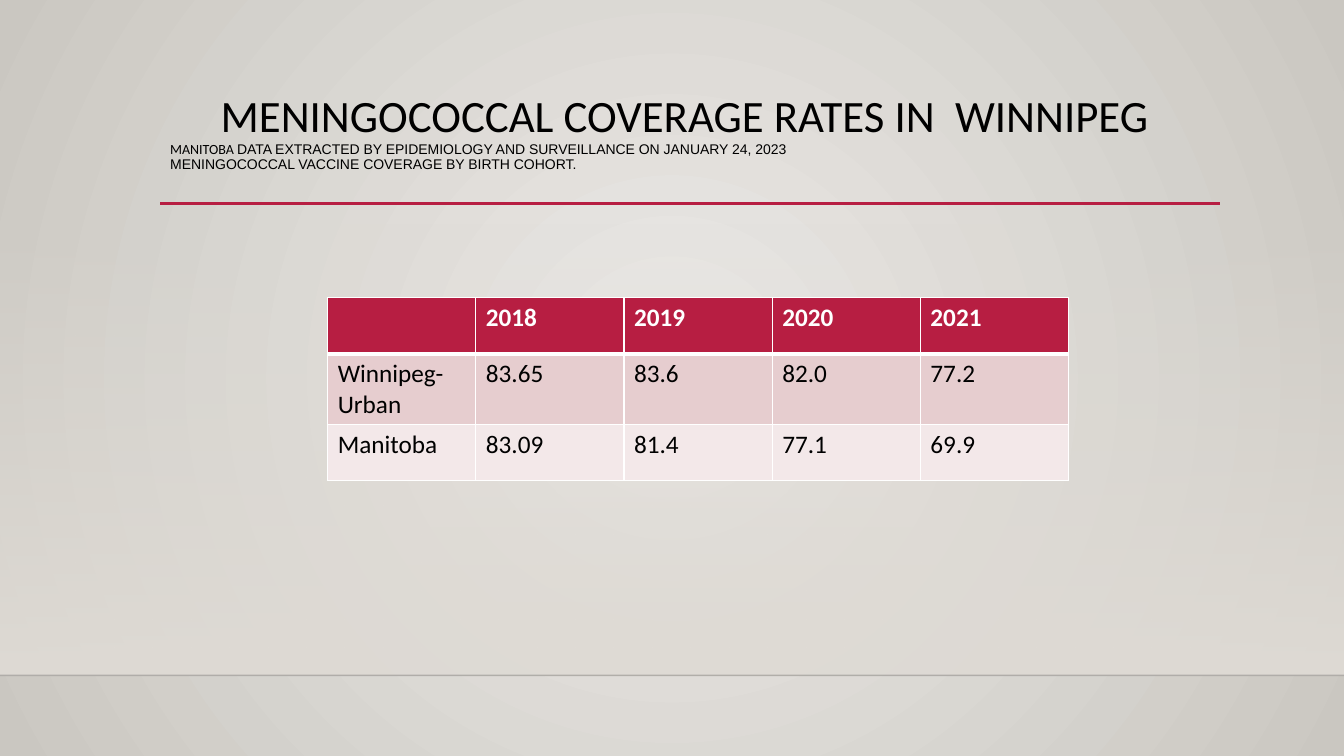
from lxml import etree
from pptx import Presentation
from pptx.dml.color import RGBColor
from pptx.enum.shapes import MSO_CONNECTOR, MSO_SHAPE
from pptx.enum.text import MSO_ANCHOR
from pptx.oxml.ns import qn
from pptx.util import Inches, Pt

STRAIGHT = MSO_CONNECTOR.STRAIGHT
RECT = MSO_SHAPE.RECTANGLE
TOP = MSO_ANCHOR.TOP

TITLE = "MENINGOCOCCAL COVERAGE RATES IN  WINNIPEG"
NOTE = [
    ("MANITOBA ", "Calibri"),
    ("DATA EXTRACTED BY EPIDEMIOLOGY AND SURVEILLANCE ON JANUARY 24, 2023\v"
     "MENINGOCOCCAL VACCINE COVERAGE BY BIRTH COHORT.", "Arial"),
]
RATES = [
    ["", "2018", "2019", "2020", "2021"],
    ["Winnipeg- Urban", "83.65", "83.6", "82.0", "77.2"],
    ["Manitoba", "83.09", "81.4", "77.1", "69.9"],
]
HEIGHTS = [0.56, 0.62, 0.56]
COL = 1.47

THEME = {
    "font": "Calibri", "title": 32, "note": 10, "cell": 18,
    "ink": "000000", "white": "FFFFFF", "red": "B71E42",
    "rows": ["B71E42", "E6CDCF", "F3E8E9"],
    "glow": ["ECEAE7", "CAC7C1"], "wall": "DFDBD5", "edge": "000001",
}


def rgb(name):
    return RGBColor.from_string(name)


def style(font, size, color, face=THEME["font"], bold=False):
    font.size, font.name, font.bold = Pt(size), face, bold
    font.color.rgb = rgb(color)


def shade(fill, colors):
    fill.gradient()
    for stop, color in zip(fill.gradient_stops, colors):
        stop.color.rgb = rgb(color)


def fade(root, share):
    color = next(root.iter(qn("a:srgbClr")))
    etree.SubElement(color, qn("a:alpha"), val=str(share * 1000))


def rule(slide, left, right, y, color, width):
    line = slide.shapes.add_connector(
        STRAIGHT, Inches(left), Inches(y), Inches(right), Inches(y))
    line.line.color.rgb = rgb(color)
    line.line.width = Pt(width)
    etree.SubElement(line.element.spPr, qn("a:effectLst"))
    return line


def border(cell, widths):
    props = cell._tc.get_or_add_tcPr()
    for spot, (side, width) in enumerate(widths.items()):
        edge = etree.Element(qn("a:ln" + side), w=str(Pt(width)))
        paint = etree.SubElement(edge, qn("a:solidFill"))
        etree.SubElement(paint, qn("a:srgbClr"), val=THEME["white"])
        props.insert(spot, edge)


def backdrop(slide):
    shade(slide.background.fill, THEME["glow"])
    grad = next(slide.element.iter(qn("a:gradFill")))
    grad.remove(grad.find(qn("a:lin")))
    ring = etree.SubElement(grad, qn("a:path"), path="circle")
    mid = dict.fromkeys("ltrb", "50000")
    etree.SubElement(ring, qn("a:fillToRect"), **mid)
    wall = slide.shapes.add_shape(
        RECT, 0, Inches(2.21), Inches(13.33), Inches(4.49))
    wall.shadow.inherit = False
    wall.line.fill.background()
    shade(wall.fill, [THEME["wall"]] * 2)
    wall.fill.gradient_angle = 270
    fade(wall.element.spPr, 0)
    floor = rule(slide, 0, 13.33, 6.7, THEME["edge"], 1)
    fade(floor.element.spPr, 20)
    rule(slide, 1.59, 12.1, 2.02, THEME["red"], 2.5)


def heading(slide):
    box = slide.shapes.add_textbox(
        Inches(1.59), Inches(0.88), Inches(10.5), Inches(2.69))
    frame = box.text_frame
    frame.word_wrap = True
    frame.vertical_anchor = TOP
    frame.text = TITLE
    head = frame.paragraphs[0]
    head.line_spacing = 0.9
    head._p.get_or_add_pPr().set("indent", str(Inches(0.5)))
    style(head.runs[0].font, THEME["title"], THEME["ink"])
    note = frame.add_paragraph()
    note.line_spacing = 0.9
    note.text = "".join(text for text, face in NOTE[1:])
    for run in note.runs:
        style(run.font, THEME["note"], THEME["ink"], NOTE[1][1])
    lead = note.add_run()
    lead.text = NOTE[0][0]
    style(lead.font, THEME["note"], THEME["ink"], NOTE[0][1])
    note.runs[0]._r.addprevious(lead._r)


def table(slide):
    grid = slide.shapes.add_table(
        len(RATES), len(RATES[0]), Inches(3.25), Inches(2.95),
        Inches(COL * len(RATES[0])), Inches(sum(HEIGHTS))).table
    for col in grid.columns:
        col.width = Inches(COL)
    for i, texts in enumerate(RATES):
        grid.rows[i].height = Inches(HEIGHTS[i])
        color = THEME["ink"] if i else THEME["white"]
        widths = {"L": 1, "R": 1, "T": 3 if i == 1 else 1, "B": 1 if i else 3}
        for j, text in enumerate(texts):
            cell = grid.cell(i, j)
            cell.text = text
            style(cell.text_frame.paragraphs[0].font,
                  THEME["cell"], color, bold=i == 0)
            for run in cell.text_frame.paragraphs[0].runs:
                style(run.font, THEME["cell"], color, bold=i == 0)
            cell.fill.solid()
            cell.fill.fore_color.rgb = rgb(THEME["rows"][i])
            border(cell, widths)


def main():
    deck = Presentation()
    deck.slide_width, deck.slide_height = Inches(13.33), Inches(7.5)
    slide = deck.slides.add_slide(deck.slide_layouts[6])
    backdrop(slide)
    heading(slide)
    table(slide)
    deck.save("out.pptx")


if __name__ == "__main__":
    main()
